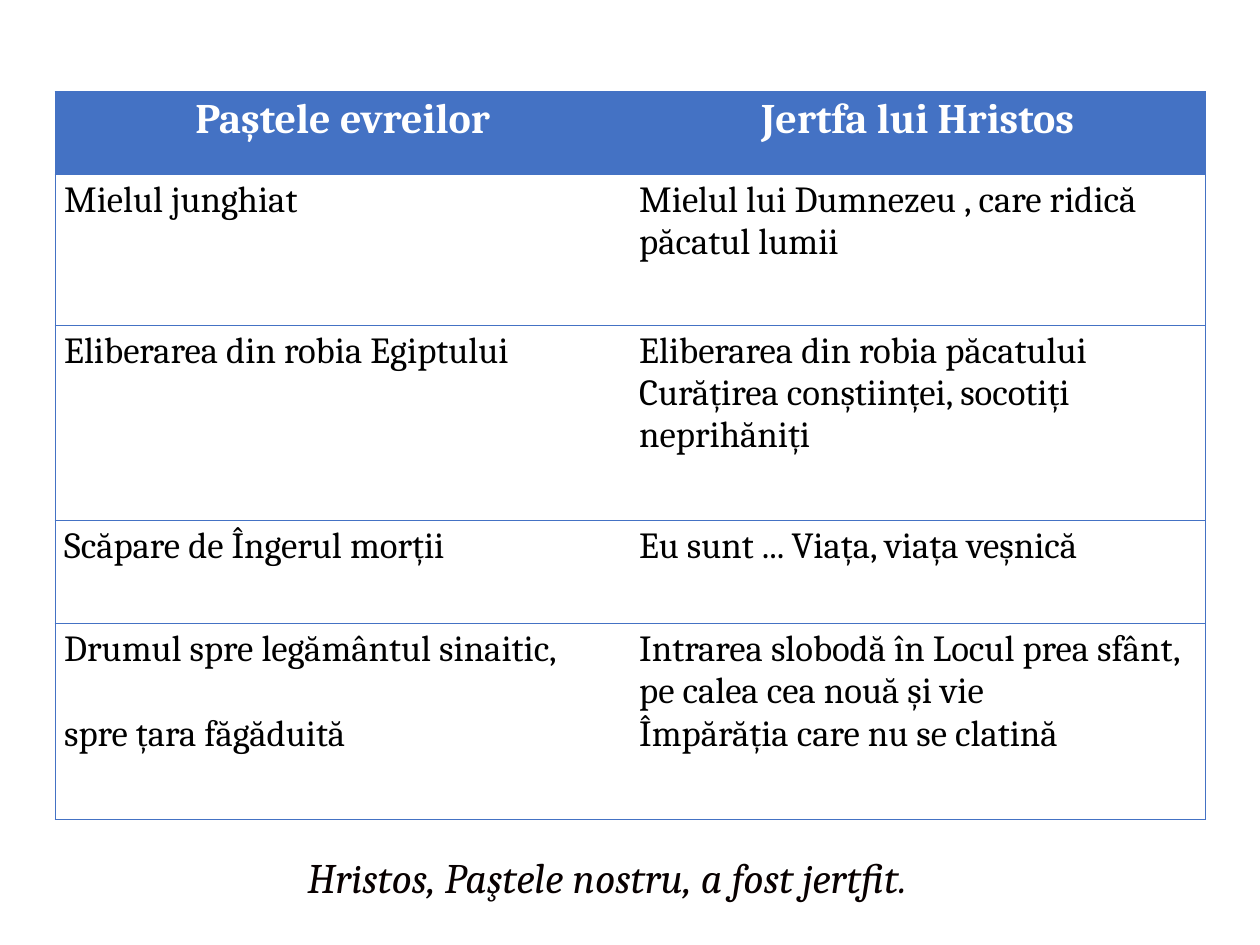
from dataclasses import dataclass

import pptx
import pptx.dml.color
import pptx.enum.text
import pptx.oxml
import pptx.oxml.ns
import pptx.util

Pt = pptx.util.Pt
RGB = pptx.dml.color.RGBColor.from_string
ALIGN = pptx.enum.text.PP_ALIGN


@dataclass(frozen=True)
class Theme:
    font: str = "Cambria"
    accent: str = "4472C4"
    paper: str = "FFFFFF"
    ink: str = "000000"
    verse_ink: str = "080000"
    head_size: float = 24
    body_size: float = 21
    line: float = 0.5


def write(p, text, *, font, size, color, bold=False, italic=False, align=ALIGN.LEFT, before=0):
    """Put one formatted run into a paragraph."""
    p.alignment = align
    p.space_before = Pt(before)
    r = p.add_run()
    r.text = text
    f = r.font
    f.name, f.size, f.bold, f.italic = font, Pt(size), bold, italic
    f.color.rgb = RGB(color)


def set_border(cell, side, color, width):
    """Draw one side of a cell, or hide it when color is None."""
    fill = f'<a:solidFill><a:srgbClr val="{color}"/></a:solidFill>' if color else "<a:noFill/>"
    ns = pptx.oxml.ns.nsdecls("a")
    ln = pptx.oxml.parse_xml(f'<a:ln{side} {ns} w="{Pt(width)}">{fill}</a:ln{side}>')
    cell._tc.get_or_add_tcPr().append(ln)


class Deck:
    def __init__(self, theme, width, height):
        self.theme = theme
        self.prs = pptx.Presentation()
        self.prs.slide_width, self.prs.slide_height = Pt(width), Pt(height)
        self.s = None

    def add_slide(self):
        self.s = self.prs.slides.add_slide(self.prs.slide_layouts[6])

    def add_table(self, rows, left, top, col_width, heights):
        n_cols = len(rows[0])
        sp = self.s.shapes.add_table(len(rows), n_cols, Pt(left), Pt(top),
                                     Pt(col_width * n_cols), Pt(sum(heights)))
        table = sp.table
        table.horz_banding = False
        for col in table.columns:
            col.width = Pt(col_width)
        for i, (row, height) in enumerate(zip(rows, heights)):
            table.rows[i].height = Pt(height)
            for j, lines in enumerate(row):
                self.fill_cell(table.cell(i, j), lines, i == 0, j == 0, j == n_cols - 1)

    def fill_cell(self, cell, lines, header, first, last):
        t = self.theme
        cell.margin_left = cell.margin_right = Pt(5.2)
        cell.margin_top = cell.margin_bottom = Pt(2.6)
        # Frame and row rules, with no rule between the columns
        for side, shown in (("L", first), ("R", last), ("T", True), ("B", True)):
            set_border(cell, side, t.accent if shown else None, t.line)
        cell.fill.solid()
        cell.fill.fore_color.rgb = RGB(t.accent if header else t.paper)
        tf = cell.text_frame
        for k, (text, before) in enumerate(lines):
            p = tf.add_paragraph() if k else tf.paragraphs[0]
            write(p, text, font=t.font, before=before, bold=header,
                  size=t.head_size if header else t.body_size,
                  color=t.paper if header else t.ink,
                  align=ALIGN.CENTER if header else ALIGN.LEFT)

    def add_verse(self, text, left, top, width, height):
        t = self.theme
        sp = self.s.shapes.add_textbox(Pt(left), Pt(top), Pt(width), Pt(height))
        tf = sp.text_frame
        tf.word_wrap = True
        write(tf.paragraphs[0], text, font=t.font, size=t.head_size,
              color=t.verse_ink, italic=True)

    def save(self):
        self.prs.save("out.pptx")


# Each cell lists its paragraphs as (text, space before)
LINE_GAP = 24.4
COMPARISON = [
    [[("Paștele evreilor", 0)],
     [("Jertfa lui Hristos", 0)]],
    [[("Mielul junghiat", 0)],
     [("Mielul lui Dumnezeu , care ridică păcatul lumii", 0)]],
    [[("Eliberarea din robia Egiptului", 0)],
     [("Eliberarea din robia păcatului", 0),
      ("Curățirea conștiinței, socotiți neprihăniți", 0)]],
    [[("Scăpare de Îngerul morții", 0)],
     [("Eu sunt ... Viața, viața veșnică", 0)]],
    [[("Drumul spre legământul sinaitic,", 0),
      ("spre țara făgăduită", LINE_GAP)],
     [("Intrarea slobodă în Locul prea sfânt, pe calea cea nouă și vie", 0),
      ("Împărăția care nu se clatină", 0)]],
]


def main():
    deck = Deck(Theme(), 720, 540)
    deck.add_slide()
    # Comparison table
    deck.add_table(COMPARISON, left=31.5, top=52.3, col_width=328.6,
                   heights=[47.6, 86.1, 111.6, 58.9, 111.6])
    # Closing verse
    deck.add_verse("Hristos, Paştele nostru, a fost jertfit.", 168.5, 483.1, 382.3, 36)
    deck.save()


if __name__ == "__main__":
    main()
